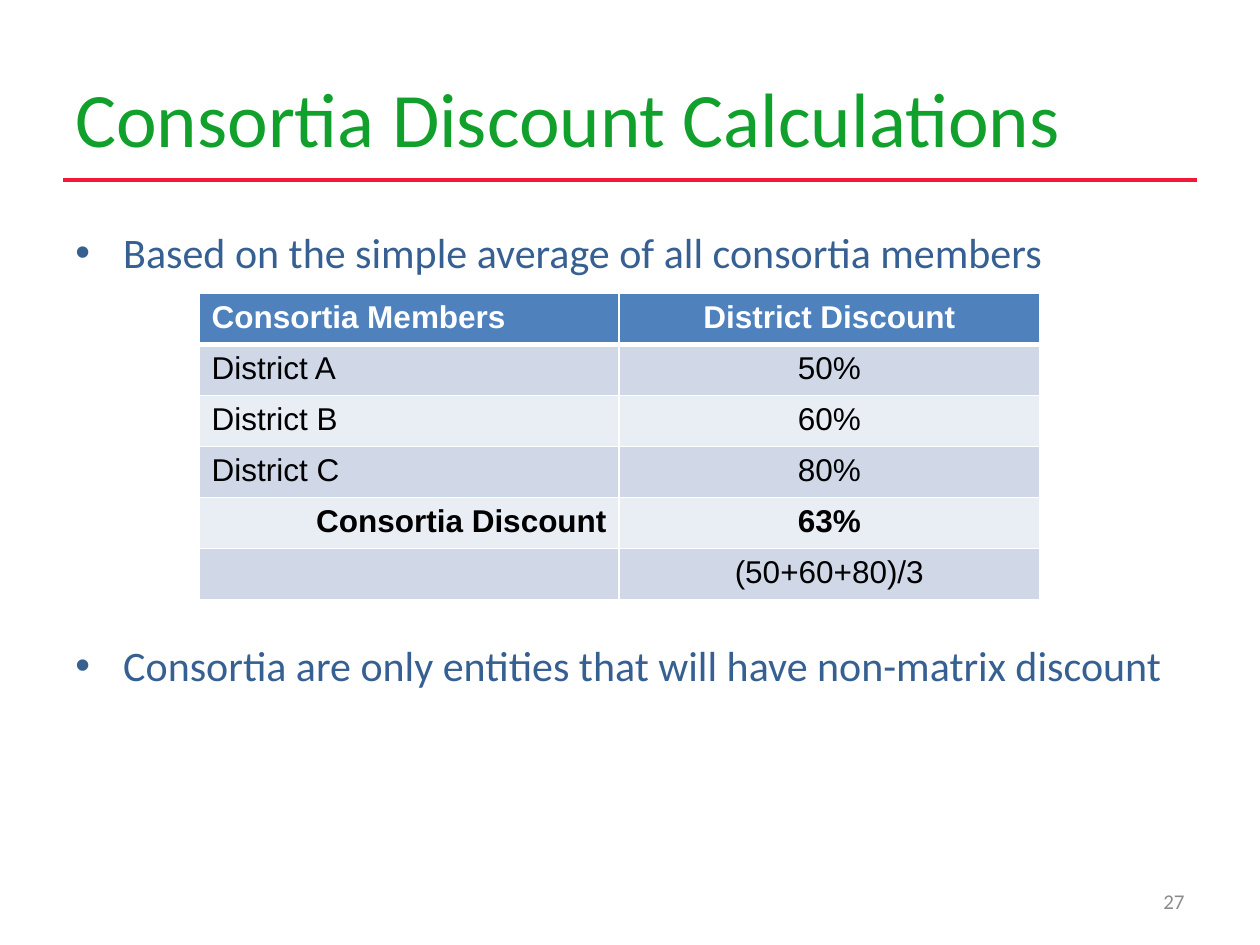
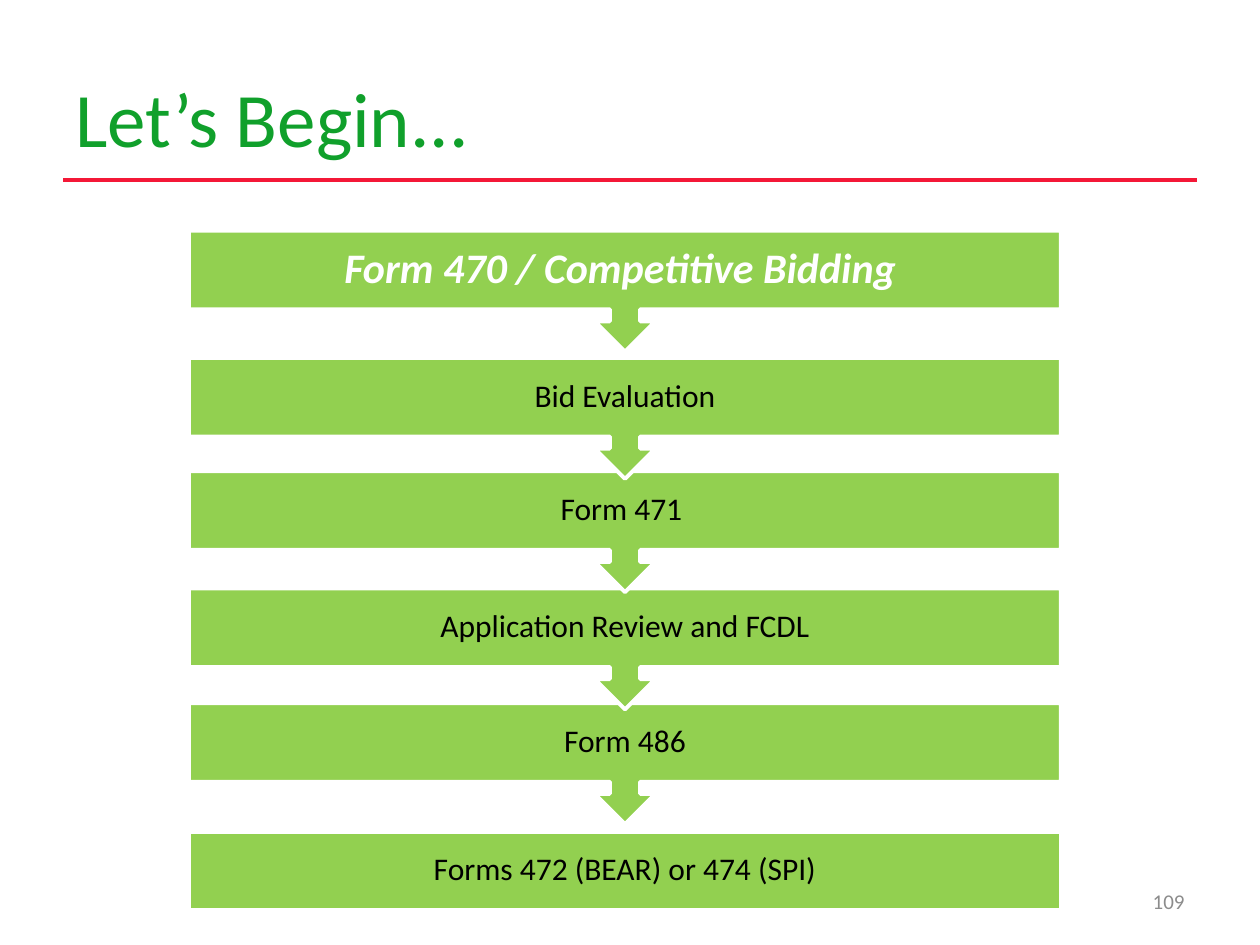
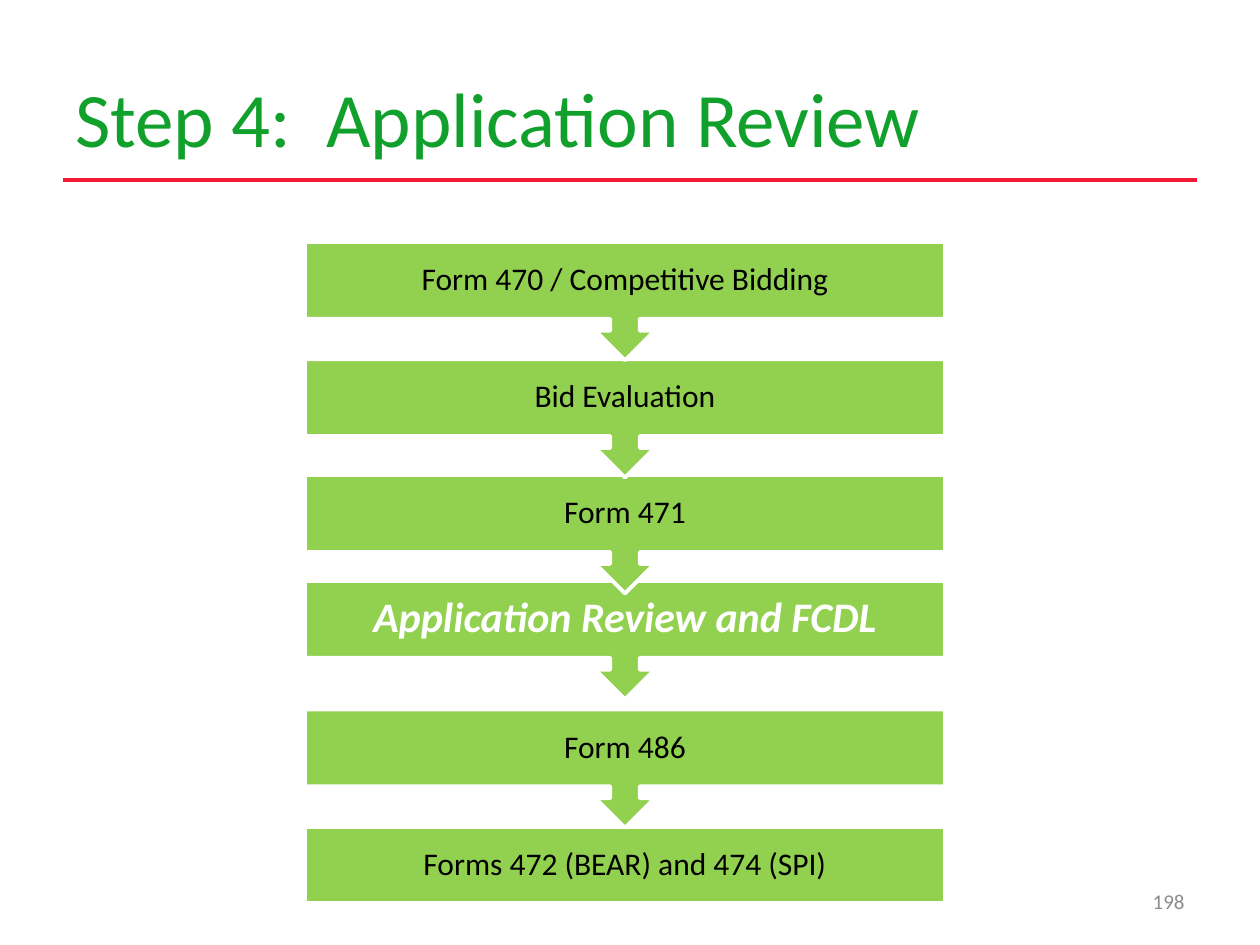
"""Build three slides on consortia discounts and the application steps."""
from lxml.etree import SubElement
from pptx import Presentation
from pptx.dml.color import RGBColor
from pptx.enum.shapes import MSO_CONNECTOR as Connector, MSO_SHAPE as Preset
from pptx.enum.text import MSO_ANCHOR as Anchor, PP_ALIGN as Align
from pptx.oxml.ns import qn
from pptx.util import Inches, Pt

TITLE_GREEN = "10A02B"
RULE_RED = "F41837"
BODY_BLUE = "376092"
NUMBER_GRAY = "8C8C8C"
STEP_GREEN = "92D050"
HEADER_BLUE = "4F81BD"
BAND_COLORS = ["E9EDF4", "D0D8E8"]
WHITE = "FFFFFF"
BLACK = "000000"


def paint(fill, color):
    fill.solid()
    fill.fore_color.rgb = RGBColor.from_string(color)


def write(frame, text, size=18, color=BLACK, font="Calibri", bold=False, italic=False,
          align=Align.LEFT, anchor=Anchor.MIDDLE, inset=None, line_spacing=None,
          space_before=0, bullet=None):
    frame.word_wrap = True
    frame.vertical_anchor = anchor
    if inset is not None:
        frame.margin_left = frame.margin_right = Inches(inset)
        frame.margin_top = frame.margin_bottom = 0
    para = frame.paragraphs[0] if not frame.text else frame.add_paragraph()
    para.alignment = align
    para.line_spacing = line_spacing
    para.space_before = Pt(space_before)
    if bullet:
        props = para._p.get_or_add_pPr()
        props.set("marL", str(Inches(0.38)))
        props.set("indent", str(Inches(-0.38)))
        SubElement(props, qn("a:buFont"), typeface="Arial")
        SubElement(props, qn("a:buChar"), char=bullet)
    span = para.add_run()
    span.text = text
    span.font.name = font
    span.font.size = Pt(size)
    span.font.bold = bold
    span.font.italic = italic
    paint(span.font.fill, color)


deck = Presentation()
deck.slide_width = Inches(10)
deck.slide_height = Inches(7.5)

pages = []
for title, number in [("Consortia Discount Calculations", "27"),
                      ("Let’s Begin...", "109"),
                      ("Step 4:  Application Review", "198")]:
    page = deck.slides.add_slide(deck.slide_layouts[6])
    rule = page.shapes.add_connector(Connector.STRAIGHT, Inches(0.5), Inches(1.43),
                                     Inches(9.5), Inches(1.43))
    paint(rule.line.fill, RULE_RED)
    rule.line.width = Pt(2)
    SubElement(rule._element.spPr, qn("a:effectLst"))
    box = page.shapes.add_textbox(Inches(0.5), Inches(0.3), Inches(9), Inches(1.25))
    write(box.text_frame, title, size=44, color=TITLE_GREEN)
    box = page.shapes.add_textbox(Inches(7.17), Inches(6.95), Inches(2.33), Inches(0.4))
    write(box.text_frame, number, size=12, color=NUMBER_GRAY, align=Align.RIGHT)
    pages.append(page)

discount_page, begin_page, review_page = pages

box = discount_page.shapes.add_textbox(Inches(0.5), Inches(1.75), Inches(9), Inches(4.95))
for text, gap in [("Based on the simple average of all consortia members", 0),
                  ("Consortia are only entities that will have non-matrix discount", 207)]:
    write(box.text_frame, text, size=24, color=BODY_BLUE, anchor=Anchor.TOP,
          space_before=gap, bullet="•")

discount_rows = [
    ("Consortia Members", "District Discount"),
    ("District A", "50%"),
    ("District B", "60%"),
    ("District C", "80%"),
    ("Consortia Discount", "63%"),
    ("", "(50+60+80)/3"),
]
HEADER_ROW, TOTAL_ROW = 0, 4
table = discount_page.shapes.add_table(len(discount_rows), 2, Inches(1.58), Inches(2.33),
                                       Inches(6.67), Inches(2.43)).table
for row, values in enumerate(discount_rows):
    for column, value in enumerate(values):
        cell = table.cell(row, column)
        props = cell._tc.get_or_add_tcPr()
        for side in ("L", "R", "T", "B"):
            thick = (row, side) in [(HEADER_ROW, "B"), (HEADER_ROW + 1, "T")]
            edge = SubElement(props, qn(f"a:ln{side}"), w=str(Pt(3 if thick else 1)))
            SubElement(SubElement(edge, qn("a:solidFill")), qn("a:srgbClr"), val=WHITE)
        paint(cell.fill, HEADER_BLUE if row == HEADER_ROW else BAND_COLORS[row % 2])
        if value:
            first_align = Align.RIGHT if row == TOTAL_ROW else Align.LEFT
            write(cell.text_frame, value, font="Arial", anchor=Anchor.TOP,
                  color=WHITE if row == HEADER_ROW else BLACK,
                  bold=row in (HEADER_ROW, TOTAL_ROW),
                  align=Align.CENTER if column else first_align)

begin_steps = [
    ("Form 470 / Competitive Bidding ", 1.83),
    ("Bid Evaluation", 2.84),
    ("Form 471 ", 3.74),
    ("Application Review and FCDL", 4.67),
    ("Form 486", 5.58),
    ("Forms 472 (BEAR) or 474 (SPI)", 6.6),
]
review_steps = [
    ("Form 470 / Competitive Bidding", 1.92),
    ("Bid Evaluation", 2.85),
    ("Form 471", 3.77),
    ("Application Review and FCDL", 4.61),
    ("Form 486", 5.63),
    ("Forms 472 (BEAR) and 474 (SPI)", 6.56),
]
for page, steps, current, left, width, callout_height, box_height in [
        (begin_page, begin_steps, 0, 1.5, 6.92, 0.96, 0.62),
        (review_page, review_steps, 3, 2.42, 5.08, 0.94, 0.61)]:
    last = len(steps) - 1
    for index, (text, top) in reversed(list(enumerate(steps))):
        preset = Preset.RECTANGLE if index == last else Preset.UP_ARROW_CALLOUT
        height = box_height if index == last else callout_height
        step = page.shapes.add_shape(preset, Inches(left), Inches(top),
                                     Inches(width), Inches(height))
        step.rotation = 0 if index == last else 180
        step.shadow.inherit = False
        paint(step.fill, STEP_GREEN)
        paint(step.line.fill, WHITE)
        step.line.width = Pt(2.25)
        label = page.shapes.add_textbox(Inches(left), Inches(top),
                                        Inches(width), Inches(box_height))
        active = index == current
        write(label.text_frame, text, size=24 if active else 18,
              color=WHITE if active else BLACK, bold=active, italic=active,
              align=Align.CENTER, inset=0.19 if active else 0.14, line_spacing=0.9)

deck.save("out.pptx")
